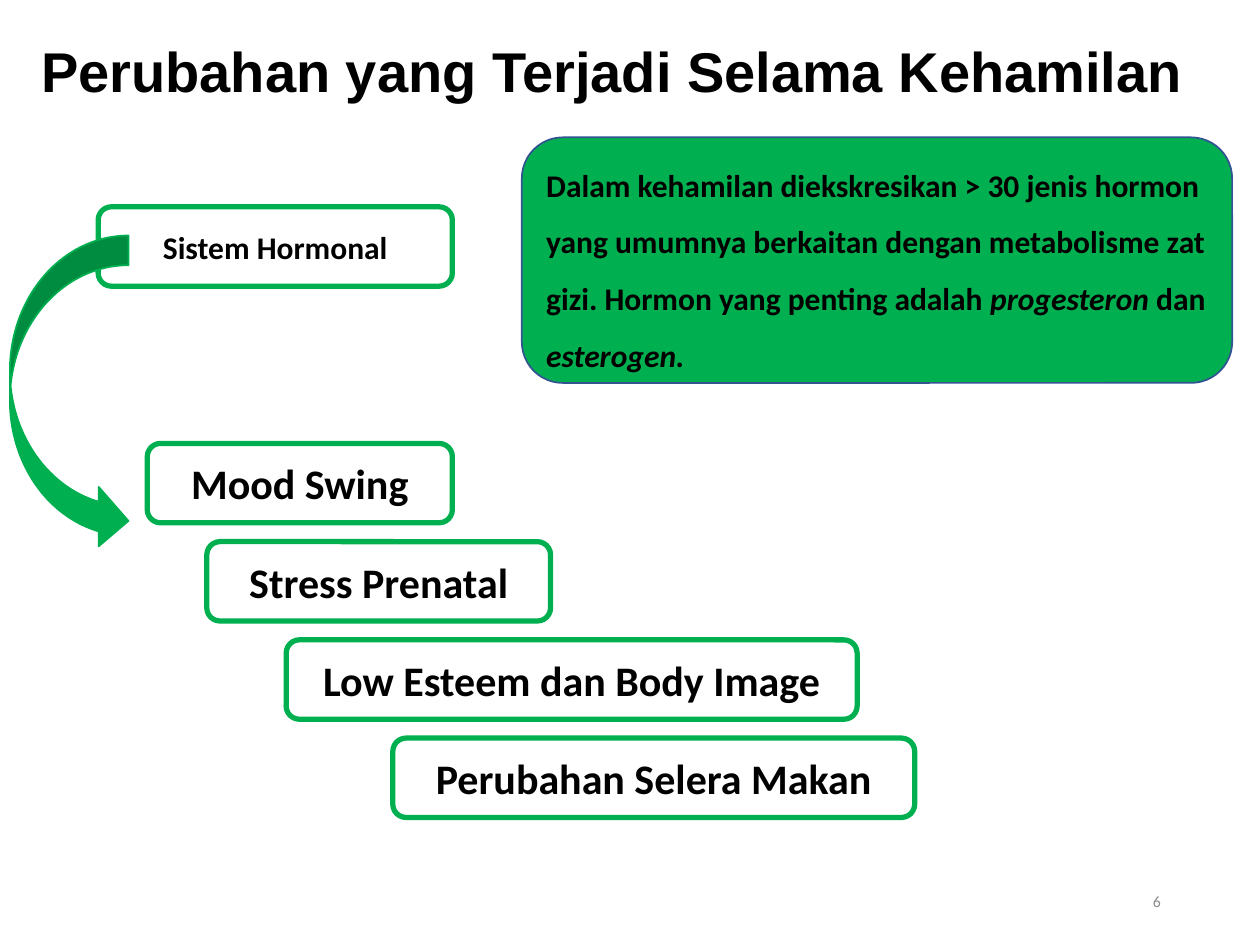
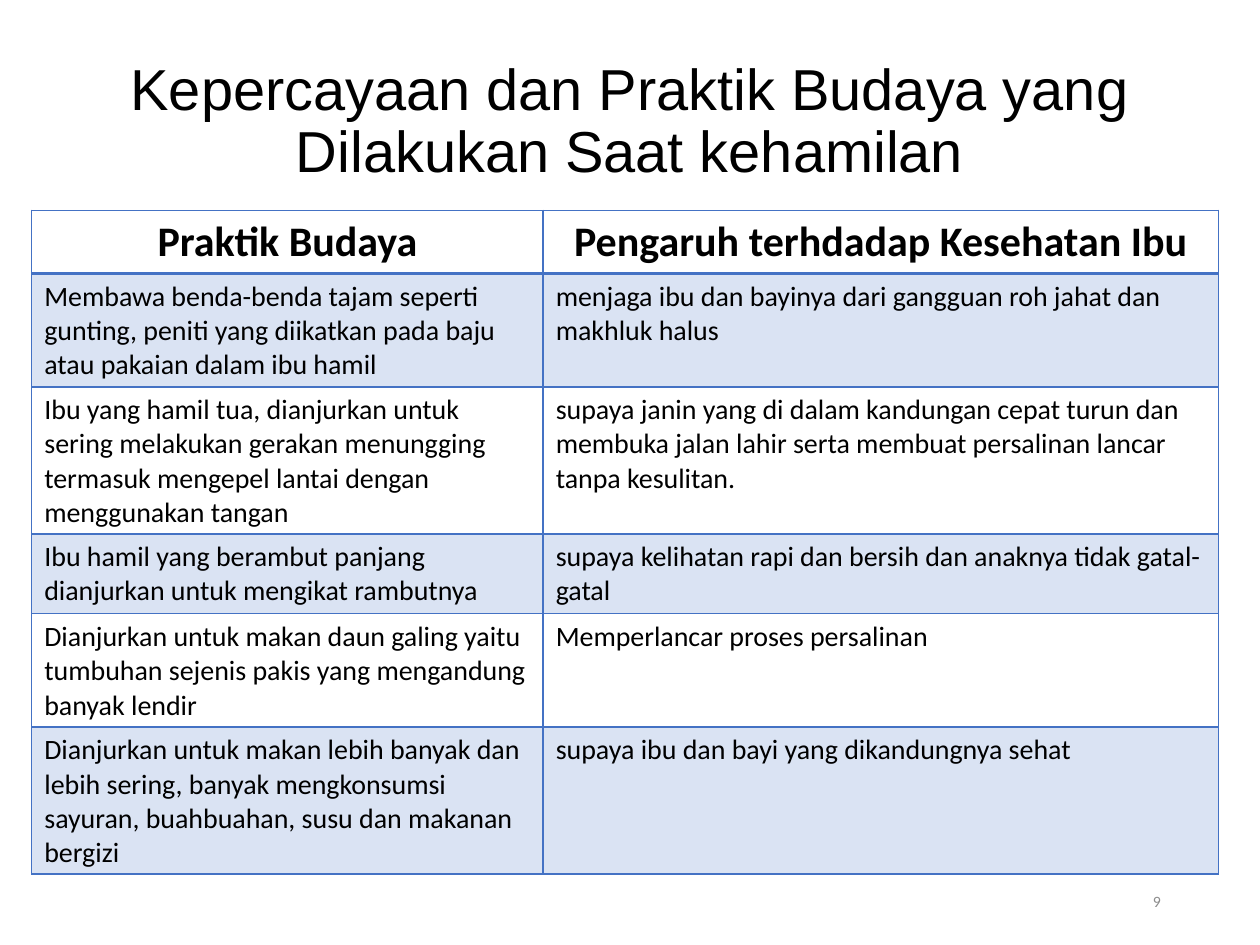
"""Build two slides on changes and cultural practices during pregnancy."""
import pptx
import pptx.dml.color
import pptx.enum.shapes
import pptx.enum.text
import pptx.oxml
import pptx.oxml.ns
import pptx.util

Cm = pptx.util.Cm
Pt = pptx.util.Pt
RGBColor = pptx.dml.color.RGBColor
MSO_SHAPE = pptx.enum.shapes.MSO_SHAPE
PP_ALIGN = pptx.enum.text.PP_ALIGN
MSO_ANCHOR = pptx.enum.text.MSO_ANCHOR

BLACK = RGBColor(0x00, 0x00, 0x00)
GRAY = RGBColor(0x8C, 0x8C, 0x8C)
GREEN = RGBColor(0x00, 0xB0, 0x50)
NAVY = RGBColor(0x32, 0x54, 0x91)
BLUE = RGBColor(0x44, 0x72, 0xC4)
PALE_BLUE = RGBColor(0xDA, 0xE3, 0xF3)
TITLE_FONT = "Arial"
BODY_FONT = "Calibri"

HORMONE_RUNS = [
    ("Dalam kehamilan diekskresikan > 30 jenis hormon yang umumnya berkaitan "
     "dengan metabolisme zat gizi. Hormon yang penting adalah ", False),
    ("progesteron", True),
    (" dan ", False),
    ("esterogen.", True),
]
EFFECTS = [
    ("Mood Swing", 2.97, 6.15),
    ("Stress Prenatal", 4.17, 6.93),
    ("Low Esteem dan Body Image", 5.77, 11.51),
    ("Perubahan Selera Makan", 7.92, 10.52),
]
EFFECTS_TOP = 8.94
EFFECT_STEP = 1.98
BOX_HEIGHT = 1.6

PRACTICES = [
    ("Praktik Budaya", "Pengaruh terhdadap Kesehatan Ibu"),
    ("Membawa benda-benda tajam seperti gunting, peniti yang diikatkan pada "
     "baju atau pakaian dalam ibu hamil",
     "menjaga ibu dan bayinya dari gangguan roh jahat dan makhluk halus"),
    ("Ibu yang hamil tua, dianjurkan untuk sering melakukan gerakan menungging "
     "termasuk mengepel lantai dengan menggunakan tangan",
     "supaya janin yang di dalam kandungan cepat turun dan membuka jalan lahir "
     "serta membuat persalinan lancar tanpa kesulitan."),
    ("Ibu hamil yang berambut panjang dianjurkan untuk mengikat rambutnya",
     "supaya kelihatan rapi dan bersih dan anaknya tidak gatal-gatal"),
    ("Dianjurkan untuk makan daun galing yaitu tumbuhan sejenis pakis yang "
     "mengandung banyak lendir",
     "Memperlancar proses persalinan"),
    ("Dianjurkan untuk makan lebih banyak dan lebih sering, banyak mengkonsumsi "
     "sayuran, buahbuahan, susu dan makanan bergizi",
     "supaya ibu dan bayi yang dikandungnya sehat"),
]
COLUMN_WIDTHS = (10.31, 13.61)
ROW_HEIGHT = 1.24


def style_paragraph(paragraph, size, bold=False, color=BLACK, font=BODY_FONT,
                    align=PP_ALIGN.LEFT, spacing=None):
    """Set the font, alignment and line spacing of a paragraph."""
    paragraph.alignment = align
    if spacing:
        paragraph.line_spacing = spacing
    paragraph.font.size = Pt(size)
    paragraph.font.bold = bold
    paragraph.font.color.rgb = color
    paragraph.font.name = font


def add_text(slide, text, box, size, **style):
    """Add a wrapped text box, centred vertically."""
    frame = slide.shapes.add_textbox(*map(Cm, box)).text_frame
    frame.word_wrap = True
    frame.vertical_anchor = MSO_ANCHOR.MIDDLE
    frame.text = text
    style_paragraph(frame.paragraphs[0], size, **style)


def add_title(slide, text, box, size, **style):
    """Add a slide title."""
    add_text(slide, text, box, size, font=TITLE_FONT, spacing=0.9, **style)


def add_slide_number(slide, number):
    """Add the slide number at the lower right."""
    add_text(slide, str(number), (17.93, 17.65, 5.72, 1.02), 9,
             color=GRAY, align=PP_ALIGN.RIGHT)


def add_shape(slide, kind, box, line_color, line_width, fill=None):
    """Add a preset shape without shadow."""
    shape = slide.shapes.add_shape(kind, *map(Cm, box))
    shape.shadow.inherit = False
    if fill is None:
        shape.fill.background()
    else:
        shape.fill.solid()
        shape.fill.fore_color.rgb = fill
    shape.line.color.rgb = line_color
    shape.line.width = Pt(line_width)
    return shape


def add_label_box(slide, text, box, size):
    """Add a rounded box with a green outline and a bold label."""
    shape = add_shape(slide, MSO_SHAPE.ROUNDED_RECTANGLE, box, GREEN, 3)
    shape.text_frame.text = text
    style_paragraph(shape.text_frame.paragraphs[0], size, bold=True,
                    align=PP_ALIGN.CENTER)


def add_hormone_note(slide):
    """Add the green note about pregnancy hormones."""
    shape = add_shape(slide, MSO_SHAPE.ROUNDED_RECTANGLE,
                      (10.52, 2.77, 14.32, 4.95), NAVY, 1, GREEN)
    paragraph = shape.text_frame.paragraphs[0]
    for text, italic in HORMONE_RUNS:
        run = paragraph.add_run()
        run.text = text
        run.font.italic = italic
    style_paragraph(paragraph, 18, bold=True, spacing=1.5)


def set_cell_borders(cell, widths):
    """Draw the cell borders, given widths in points by side."""
    properties = cell._tc.get_or_add_tcPr()
    for side, width in widths.items():
        properties.append(pptx.oxml.parse_xml(
            f'<a:ln{side} {pptx.oxml.ns.nsdecls("a")} w="{Pt(width)}">'
            f'<a:solidFill><a:srgbClr val="{BLUE}"/></a:solidFill></a:ln{side}>'))


def add_practice_table(slide):
    """Add the table of practices and their effects."""
    table = slide.shapes.add_table(
        len(PRACTICES), len(COLUMN_WIDTHS), Cm(0.64), Cm(4.24),
        Cm(sum(COLUMN_WIDTHS)), Cm(ROW_HEIGHT * len(PRACTICES))).table
    table.first_row = False
    table.horz_banding = False
    for column, width in zip(table.columns, COLUMN_WIDTHS):
        column.width = Cm(width)
    for row_index, texts in enumerate(PRACTICES):
        is_header = row_index == 0
        table.rows[row_index].height = Cm(ROW_HEIGHT)
        for column_index, text in enumerate(texts):
            cell = table.cell(row_index, column_index)
            cell.text = text
            style_paragraph(
                cell.text_frame.paragraphs[0], 24 if is_header else 16,
                bold=is_header,
                align=PP_ALIGN.CENTER if is_header else PP_ALIGN.LEFT)
            set_cell_borders(cell, {"L": 1, "R": 1,
                                    "T": 2 if row_index == 1 else 1,
                                    "B": 2 if is_header else 1})
            if row_index % 2:
                cell.fill.solid()
                cell.fill.fore_color.rgb = PALE_BLUE
            else:
                cell.fill.background()


def build_changes_slide(slide):
    """Build the slide on hormonal changes."""
    add_slide_number(slide, 6)
    add_title(slide, "Perubahan yang Terjadi Selama Kehamilan",
              (0.58, 0.58, 24, 1.83), 32, bold=True)
    add_label_box(slide, "Sistem Hormonal", (1.98, 4.17, 7.14, BOX_HEIGHT), 18)
    add_hormone_note(slide)
    add_shape(slide, MSO_SHAPE.CURVED_RIGHT_ARROW, (0.2, 4.75, 2.39, 6.35),
              GREEN, 1, GREEN)
    for index, (text, left, width) in enumerate(EFFECTS):
        top = EFFECTS_TOP + index * EFFECT_STEP
        add_label_box(slide, text, (left, top, width, BOX_HEIGHT), 24)


def build_practices_slide(slide):
    """Build the slide on cultural practices."""
    add_title(slide, "Kepercayaan dan Praktik Budaya yang Dilakukan Saat kehamilan",
              (1.75, 0.64, 21.89, 3.68), 33, align=PP_ALIGN.CENTER)
    add_slide_number(slide, 9)
    add_practice_table(slide)


def main():
    """Create the presentation and save it."""
    presentation = pptx.Presentation()
    presentation.slide_width = Cm(25.4)
    presentation.slide_height = Cm(19.05)
    blank_layout = presentation.slide_layouts[6]
    for build in (build_changes_slide, build_practices_slide):
        build(presentation.slides.add_slide(blank_layout))
    presentation.save("out.pptx")


if __name__ == "__main__":
    main()
